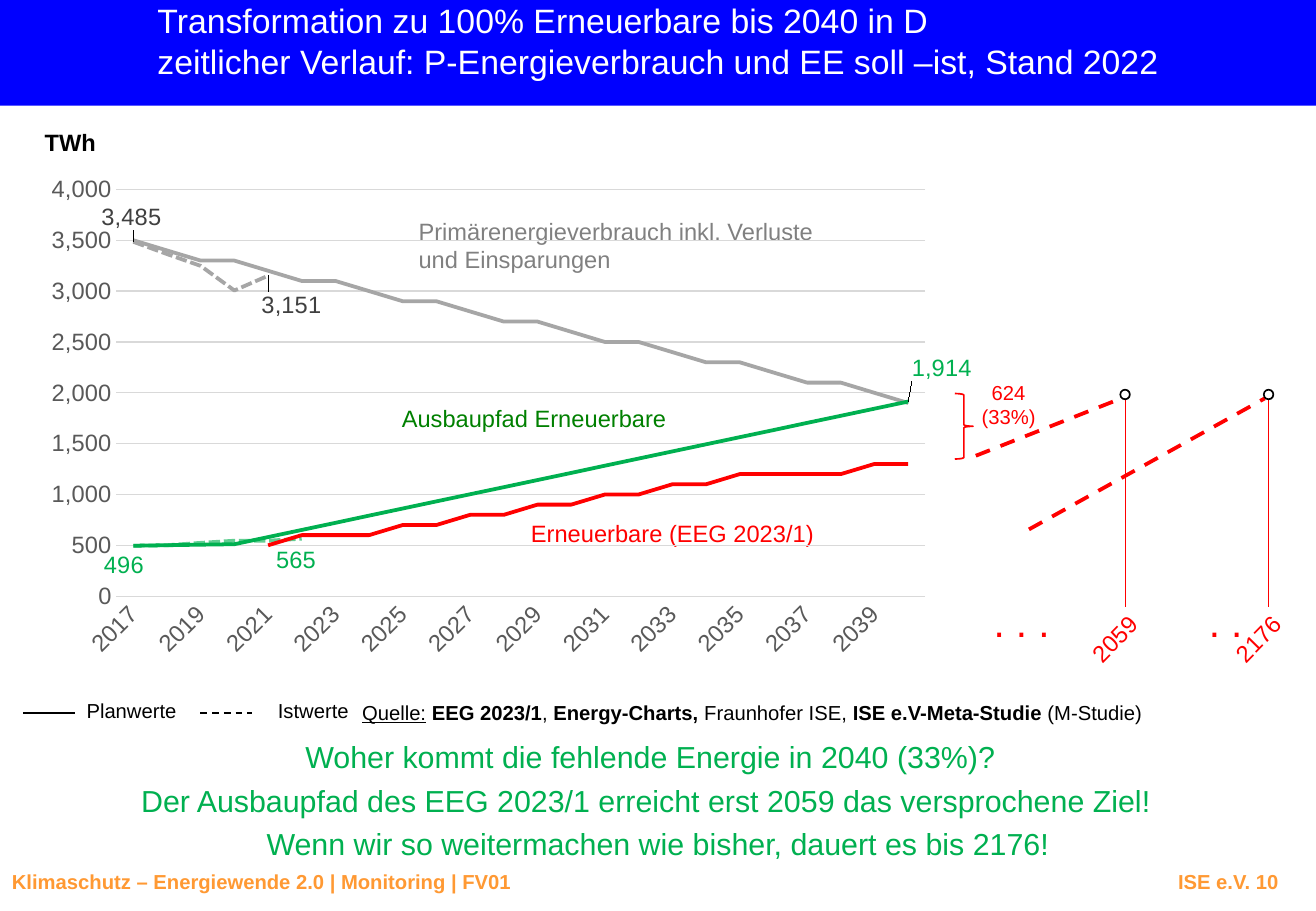
from dataclasses import dataclass, field
from typing import Optional

from lxml import etree
from pptx import Presentation
from pptx.chart.data import CategoryChartData
from pptx.dml.color import RGBColor
from pptx.enum.chart import XL_CHART_TYPE, XL_LABEL_POSITION, XL_MARKER_STYLE, XL_TICK_MARK
from pptx.enum.dml import MSO_LINE
from pptx.enum.shapes import MSO_CONNECTOR, MSO_SHAPE
from pptx.enum.text import MSO_ANCHOR, PP_ALIGN
from pptx.oxml import parse_xml
from pptx.oxml.ns import nsdecls, qn
from pptx.util import Cm, Pt

LEFT, MID, TOP = PP_ALIGN.LEFT, PP_ALIGN.CENTER, MSO_ANCHOR.TOP
DASH, SHORT = MSO_LINE.DASH, MSO_LINE.SQUARE_DOT
ABOVE, BELOW = XL_LABEL_POSITION.ABOVE, XL_LABEL_POSITION.BELOW
NO_TICK, NO_MARK, LINE_CHART = XL_TICK_MARK.NONE, XL_MARKER_STYLE.NONE, XL_CHART_TYPE.LINE
STRAIGHT = MSO_CONNECTOR.STRAIGHT
RECT, OVAL, BRACE = MSO_SHAPE.RECTANGLE, MSO_SHAPE.OVAL, MSO_SHAPE.RIGHT_BRACE
FONT = "Arial"
HUES = {"blue": "0000FF", "white": "FFFFFF", "black": "000000", "red": "FF0000",
        "orange": "FF9933", "green": "00B050", "dark": "008000", "text": "808080",
        "gray": "A6A6A6", "axis": "595959", "grid": "D9D9D9", "value": "404040"}
FIRST, LAST = 2017, 2040
EDGE = '<c:layoutTarget val="inner"/><c:xMode val="edge"/><c:yMode val="edge"/>'


@dataclass
class Label:
    text: str
    x: float
    y: float
    w: float
    h: float
    size: int
    hue: str
    align: PP_ALIGN = LEFT
    bold: bool = False
    wrap: bool = False
    turn: float = 0
    inset: Optional[float] = None
    fill: Optional[str] = None
    tab: Optional[float] = None


@dataclass
class Goal:
    year: str
    x: float
    start: tuple[float, float]
    dots: str
    dots_x: float
    dots_w: float


@dataclass
class Mark:
    year: int
    hue: str
    place: XL_LABEL_POSITION
    dx: float
    dy: float


@dataclass
class Curve:
    name: str
    hue: str
    knots: dict[int, int]
    digits: int = 0
    dash: bool = False
    alpha: Optional[int] = None
    lead: bool = False
    marks: list[Mark] = field(default_factory=list)


LABELS = [
    Label("Klimaschutz – Energiewende 2.0 | Monitoring | FV01\tISE e.V. 10", 0, 18.06, 27.51, 0.76,
          12, "orange", bold=True, wrap=True, tab=26.48),
    Label("TWh", 0.67, 2.54, 1.6, 0.86, 14, "black", MID, bold=True),
    Label("Planwerte", 1.56, 14.48, 2.41, 0.76, 12, "black"),
    Label("Istwerte", 5.56, 14.48, 2.01, 0.76, 12, "black"),
    Label("Woher kommt die fehlende Energie in 2040 (33%)?", -0.16, 15.25, 27.51, 1.12,
          18, "green", MID, wrap=True, inset=0.18),
    Label("Der Ausbaupfad des EEG 2023/1 erreicht erst 2059 das versprochene Ziel!", -0.25, 16.18,
          27.51, 1.12, 18, "green", MID, wrap=True, inset=0.18),
    Label("Wenn wir so weitermachen wie bisher, dauert es bis 2176!", 0, 17.07, 27.51, 1.12,
          18, "green", MID, wrap=True, inset=0.18),
    Label("Primärenergieverbrauch inkl. Verluste\nund Einsparungen", 8.5, 4.41, 8.81, 1.45,
          14, "text", fill="white"),
    Label("Erneuerbare (EEG 2023/1)", 10.85, 10.72, 6.45, 0.86, 14, "red", fill="white"),
    Label("Ausbaupfad Erneuerbare", 8.15, 8.33, 6.91, 0.86, 14, "dark", wrap=True, fill="white"),
    Label("624\v(33%)", 20.26, 7.82, 1.65, 1.27, 12, "red", MID),
]
GOALS = [Goal("2059", 23.52, (20.4, 9.53), ". . .", 20.52, 1.7),
         Goal("2176", 26.52, (21.51, 11.07), ". .", 25.02, 1.22)]
SOURCE = [("Quelle:", False), (" EEG 2023/1", True), (", ", False), ("Energy-Charts, ", True),
          ("Fraunhofer ISE, ", False), ("ISE e.V-Meta-Studie ", True), ("(M-Studie)", False)]
CURVES = [
    Curve("Verbrauch Plan", "gray", {2017: 3485, 2040: 1914}, digits=-2),
    Curve("Verbrauch Ist", "gray", {2017: 3485, 2018: 3364, 2019: 3248, 2020: 3006, 2021: 3151},
          dash=True, lead=True, marks=[Mark(2017, "value", ABOVE, -0.2, -1.3),
                                       Mark(2021, "value", BELOW, 2.5, 2.2)]),
    Curve("Erneuerbare Plan", "green", {2017: 496, 2020: 511, 2040: 1914}, lead=True,
          marks=[Mark(2040, "green", ABOVE, 3.6, -3)]),
    Curve("Erneuerbare Ist", "green",
          {2017: 496, 2018: 501, 2019: 524, 2020: 545, 2021: 545, 2022: 565},
          dash=True, alpha=61, marks=[Mark(2017, "green", BELOW, -1, 0.3),
                                      Mark(2022, "green", BELOW, -0.6, 0.6)]),
    Curve("EEG 2023/1", "red", {2021: 545, 2024: 635, 2026: 720, 2035: 1150, 2040: 1310},
          digits=-2),
]


def rgb(hue: str) -> RGBColor:
    return RGBColor.from_string(HUES[hue])


def set_font(font, size: int, hue: str, bold: bool = False) -> None:
    font.name, font.size, font.bold = FONT, Pt(size), bold
    font.color.rgb = rgb(hue)


def set_inset(frame, gap: float) -> None:
    frame.margin_left = frame.margin_right = frame.margin_top = frame.margin_bottom = Cm(gap)


def add_label(slide, item: Label) -> None:
    box = slide.shapes.add_textbox(Cm(item.x), Cm(item.y), Cm(item.w), Cm(item.h))
    box.rotation = item.turn
    if item.fill:
        box.fill.solid()
        box.fill.fore_color.rgb = rgb(item.fill)
    frame = box.text_frame
    frame.word_wrap = item.wrap
    if item.inset is not None:
        set_inset(frame, item.inset)
    frame.text = item.text
    for para in frame.paragraphs:
        para.alignment = item.align
        if item.tab:
            tabs = etree.SubElement(para._p.get_or_add_pPr(), qn("a:tabLst"))
            etree.SubElement(tabs, qn("a:tab"), pos=str(Cm(item.tab)), algn="r")
        set_font(para.font, item.size, item.hue, item.bold)


def add_shape(slide, kind: MSO_SHAPE, x: float, y: float, w: float, h: float,
              fill: Optional[str], line: Optional[str]):
    shape = slide.shapes.add_shape(kind, Cm(x), Cm(y), Cm(w), Cm(h))
    shape.shadow.inherit = False
    if fill:
        shape.fill.solid()
        shape.fill.fore_color.rgb = rgb(fill)
    else:
        shape.fill.background()
    if line:
        shape.line.color.rgb = rgb(line)
        shape.line.width = Pt(1)
    else:
        shape.line.fill.background()
    return shape


def add_line(slide, start: tuple[float, float], end: tuple[float, float], hue: str,
             width: float, dash: bool = False) -> None:
    line = slide.shapes.add_connector(STRAIGHT, *(Cm(v) for v in start + end))
    line.line.color.rgb = rgb(hue)
    line.line.width = Pt(width)
    if dash:
        line.line.dash_style = DASH
    etree.SubElement(line._element.spPr, qn("a:effectLst"))


def add_goal(slide, goal: Goal) -> None:
    add_line(slide, goal.start, (goal.x - 0.08, 8.33), "red", 2.25, True)
    add_line(slide, (goal.x, 8.36), (goal.x, 12.7), "red", 0.25)
    add_shape(slide, OVAL, goal.x - 0.1, 8.15, 0.2, 0.2, "white", "black")
    add_label(slide, Label(goal.year, goal.x - 1.03, 12.92, 1.63, 0.86, 14, "red", turn=314.4))
    add_label(slide, Label(goal.dots, goal.dots_x, 12.37, goal.dots_w, 1.27, 24, "red"))


def add_source(slide) -> None:
    frame = slide.shapes.add_textbox(Cm(7.57), Cm(14.64), Cm(16.46), Cm(0.51)).text_frame
    set_inset(frame, 0)
    frame.word_wrap = False
    para = frame.paragraphs[0]
    set_font(para.font, 12, "black")
    for text, bold in SOURCE:
        run = para.add_run()
        run.text, run.font.bold = text, bold
    para.runs[0].font.underline = True


def trend(knots: dict[int, int], digits: int) -> list[Optional[int]]:
    vals: list[Optional[int]] = [None] * (LAST - FIRST + 1)
    years = sorted(knots)
    for a, b in zip(years, years[1:]):
        for year in range(a, b + 1):
            value = knots[a] + (knots[b] - knots[a]) * (year - a) / (b - a)
            vals[year - FIRST] = int(round(value, digits))
    return vals


def make_layout(x: float, y: float, size: str = ""):
    return parse_xml(f'<c:layout {nsdecls("c")}><c:manualLayout>{size and EDGE}<c:x val="{x / 100}"/>'
                     f'<c:y val="{y / 100}"/>{size}</c:manualLayout></c:layout>')


def make_lead(show: bool):
    return parse_xml(f'<c:extLst {nsdecls("c")}><c:ext uri="{{CE6537A1-D6FC-4f65-9D91-7224C49458BB}}" '
                     'xmlns:c15="http://schemas.microsoft.com/office/drawing/2012/chart">'
                     f'<c15:showLeaderLines val="{int(show)}"/></c:ext></c:extLst>')


def style_curve(series, curve: Curve) -> None:
    series.smooth = False
    series.marker.style = NO_MARK
    series.format.line.color.rgb = rgb(curve.hue)
    series.format.line.width = Pt(2.25)
    if curve.dash:
        series.format.line.dash_style = SHORT
    node = series._element
    if curve.alpha:
        tint = next(node.iter(qn("a:srgbClr")))
        etree.SubElement(tint, qn("a:alpha"), val=str(curve.alpha * 1000))
    if not curve.marks:
        return
    series.data_labels.show_value = False
    for mark in curve.marks:
        label = series.points[mark.year - FIRST].data_label
        set_font(label.font, 14, mark.hue)
        label.position = mark.place
    for item, mark in zip(node.iter(qn("c:dLbl")), curve.marks):
        item.insert(1, make_layout(mark.dx, mark.dy))
    group = node.find(qn("c:dLbls"))
    for old in group.findall(qn("c:showLeaderLines")):
        group.remove(old)
    group.append(make_lead(curve.lead))


def add_graph(slide) -> None:
    data = CategoryChartData(number_format="#,##0")
    data.categories = [str(year) for year in range(FIRST, LAST + 1)]
    for curve in CURVES:
        data.add_series(curve.name, trend(curve.knots, curve.digits))
    chart = slide.shapes.add_chart(LINE_CHART, Cm(0.71), Cm(3.48), Cm(19.61), Cm(10.49), data).chart
    chart.has_legend = chart.has_title = False
    set_font(chart.font, 10, "black")
    plot = chart.plots[0]
    plot.vary_by_categories = False
    for series, curve in zip(plot.series, CURVES):
        style_curve(series, curve)
    years, scale = chart.category_axis, chart.value_axis
    for axis in (years, scale):
        axis.major_tick_mark = axis.minor_tick_mark = NO_TICK
        set_font(axis.tick_labels.font, 14, "axis")
    scale.minimum_scale, scale.maximum_scale, scale.major_unit = 0, 4000, 500
    scale.tick_labels.number_format = "#,##0"
    scale.tick_labels.number_format_is_linked = False
    scale.format.line.fill.background()
    years.has_major_gridlines = False
    for line in (years.format.line, scale.major_gridlines.format.line):
        line.color.rgb = rgb("grid")
        line.width = Pt(0.75)
    node = years._element
    next(node.iter(qn("a:bodyPr"))).set("rot", "-2700000")
    skip = parse_xml(f'<c:tickLblSkip {nsdecls("c")} val="2"/>')
    node.find(qn("c:noMultiLvlLbl")).addprevious(skip)
    body = chart.element.find(qn("c:chart"))
    area = body.find(qn("c:plotArea"))
    for old in area.findall(qn("c:layout")):
        area.remove(old)
    area.insert(0, make_layout(8.8, 4.6, '<c:w val="0.8625"/><c:h val="0.811"/>'))
    clear = f'<c:spPr {nsdecls("c", "a")}><a:noFill/><a:ln><a:noFill/></a:ln></c:spPr>'
    area.append(parse_xml(clear))
    body.addnext(parse_xml(clear))


def add_title(slide) -> None:
    title = slide.shapes.title
    title.left, title.top, title.width, title.height = Cm(3.29), Cm(0), Cm(24.31), Cm(1.7)
    frame = title.text_frame
    set_inset(frame, 0)
    frame.vertical_anchor, frame.word_wrap = TOP, True
    para = frame.paragraphs[0]
    para.text = ("Transformation zu 100% Erneuerbare bis 2040 in D\v"
                 "zeitlicher Verlauf: P-Energieverbrauch und EE soll –ist, Stand 2022")
    para.alignment = LEFT
    set_font(para.font, 20, "white")
    band = add_shape(slide, RECT, 0, 0, 27.51, 2.21, "blue", None)
    title._element.addprevious(band._element)


def main() -> None:
    deck = Presentation()
    deck.slide_width, deck.slide_height = Cm(27.51), Cm(19.05)
    slide = deck.slides.add_slide(deck.slide_layouts[5])
    add_title(slide)
    for label in LABELS:
        add_label(slide, label)
    add_line(slide, (0.49, 14.91), (1.56, 14.91), "black", 1)
    add_line(slide, (4.19, 14.91), (5.26, 14.91), "black", 1, True)
    add_source(slide)
    add_shape(slide, BRACE, 19.96, 8.23, 0.38, 1.37, None, "red")
    for goal in GOALS:
        add_goal(slide, goal)
    add_graph(slide)
    deck.save("out.pptx")


if __name__ == "__main__":
    main()
